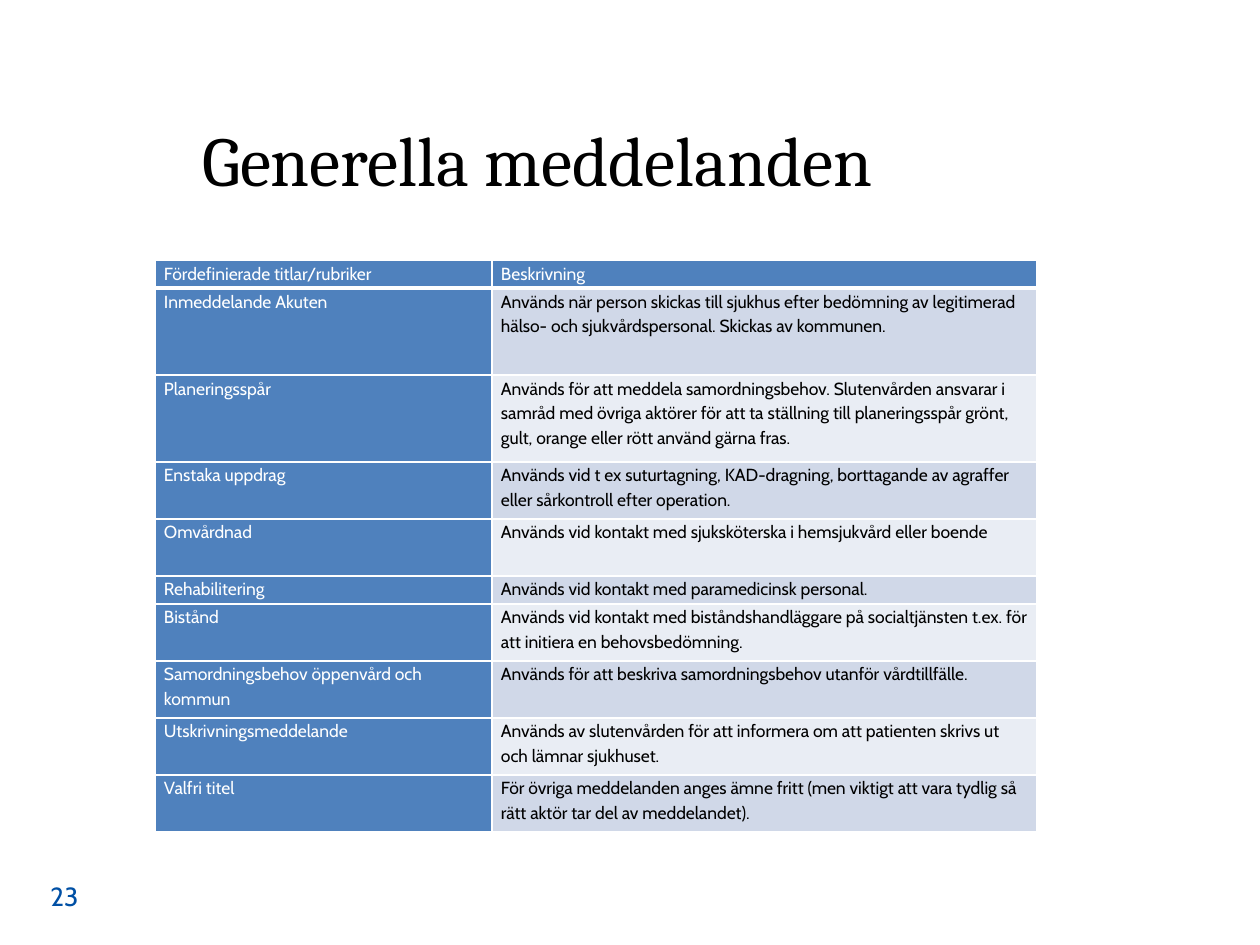
from lxml import etree
from pptx import Presentation
from pptx.dml.color import RGBColor
from pptx.enum.text import MSO_ANCHOR, PP_ALIGN
from pptx.oxml.ns import qn
from pptx.util import Pt

MIDDLE, BOTTOM = MSO_ANCHOR.MIDDLE, MSO_ANCHOR.BOTTOM
LEFT, RIGHT = PP_ALIGN.LEFT, PP_ALIGN.RIGHT
PX = 914400 / 126

THEME = {
    "head": "4F81BD", "bands": ("D0D8E8", "E9EDF4"), "rule": "FFFFFF",
    "title": {"name": "Cambria", "size": Pt(40), "color": "000000"},
    "light": {"name": "Cabin", "size": Pt(10), "color": "FFFFFF"},
    "dark": {"name": "Cabin", "size": Pt(10), "color": "000000"},
    "page": {"name": "Cabin", "size": Pt(15), "color": "0050A5"},
}

HEAD = ("Fördefinierade titlar/rubriker", "Beskrivning")
# Row height in px, message title, description
ROWS = [
    (28, *HEAD),
    (87, "Inmeddelande Akuten",
     "Används när person skickas till sjukhus efter bedömning av legitimerad "
     "hälso- och sjukvårdspersonal. Skickas av kommunen."),
    (87, "Planeringsspår",
     "Används för att meddela samordningsbehov. Slutenvården ansvarar i samråd "
     "med övriga aktörer för att ta ställning till planeringsspår grönt, gult, "
     "orange eller rött använd gärna fras."),
    (57, "Enstaka uppdrag",
     "Används vid t ex suturtagning, KAD-dragning, borttagande av agraffer "
     "eller sårkontroll efter operation."),
    (57, "Omvårdnad",
     "Används vid kontakt med sjuksköterska i hemsjukvård eller boende"),
    (28, "Rehabilitering", "Används vid kontakt med paramedicinsk personal."),
    (57, "Bistånd",
     "Används vid kontakt med biståndshandläggare på socialtjänsten t.ex. för "
     "att initiera en behovsbedömning."),
    (57, "Samordningsbehov öppenvård och kommun",
     "Används för att beskriva samordningsbehov utanför vårdtillfälle."),
    (57, "Utskrivningsmeddelande",
     "Används av slutenvården för att informera om att patienten skrivs ut "
     "och lämnar sjukhuset."),
    (57, "Valfri titel",
     "För övriga meddelanden anges ämne fritt (men viktigt att vara tydlig så "
     "rätt aktör tar del av meddelandet)."),
]
COLS = (337, 545)


def px(count):
    return round(count * PX)


def write(frame, text, style):
    """Put text in the frame's first paragraph, styled from the theme."""
    para = frame.paragraphs[0]
    run = para.add_run()
    run.text = text
    for key, value in THEME[style].items():
        if key == "color":
            run.font.color.rgb = RGBColor.from_string(value)
        else:
            setattr(run.font, key, value)
    return para


deck = Presentation()
deck.slide_width, deck.slide_height = px(1260), px(945)
slide = deck.slides.add_slide(deck.slide_layouts[6])

# Message table
size = [px(n) for n in (155, 260, sum(COLS), sum(row[0] for row in ROWS))]
table = slide.shapes.add_table(len(ROWS), len(COLS), *size).table
table.first_row = table.horz_banding = False
for col, width in zip(table.columns, COLS):
    col.width = px(width)

for r, (height, *texts) in enumerate(ROWS):
    table.rows[r].height = px(height)
    for c, text in enumerate(texts):
        cell = table.cell(r, c)
        cell.margin_left = cell.margin_right = px(9)
        cell.margin_top = cell.margin_bottom = 0
        blue = r == 0 or c == 0
        para = write(cell.text_frame, text, "light" if blue else "dark")
        para.line_spacing, para.space_after = Pt(14), Pt(6)

        props = cell._tc.get_or_add_tcPr()
        for side in ("L", "R", "T", "B"):
            weight = Pt(3) if r == 0 and side == "B" else Pt(1)
            line = etree.SubElement(props, qn("a:ln" + side), w=str(weight))
            fill = etree.SubElement(line, qn("a:solidFill"))
            etree.SubElement(fill, qn("a:srgbClr"), val=THEME["rule"])
        cell.fill.solid()
        shade = THEME["head"] if blue else THEME["bands"][(r - 1) % 2]
        cell.fill.fore_color.rgb = RGBColor.from_string(shade)

# Title and page number
for box, text, style, anchor, align in (
    ((190, 72, 978, 174), "Generella meddelanden", "title", MIDDLE, LEFT),
    ((21, 868, 70, 50), "23", "page", BOTTOM, RIGHT),
):
    frame = slide.shapes.add_textbox(*[px(n) for n in box]).text_frame
    frame.word_wrap = True
    frame.vertical_anchor = anchor
    write(frame, text, style).alignment = align

deck.save("out.pptx")
